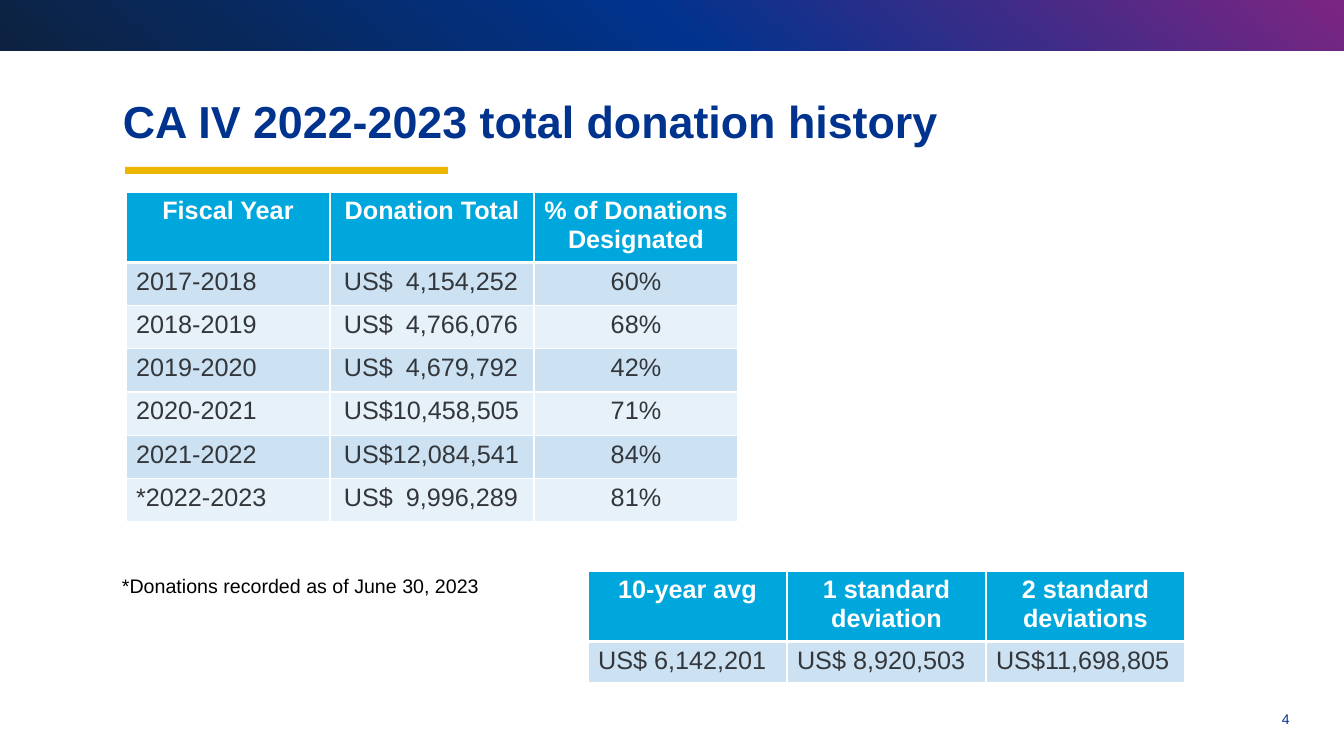
from lxml.etree import SubElement
from pptx import Presentation
from pptx.dml.color import RGBColor
from pptx.enum.shapes import MSO_SHAPE
from pptx.enum.text import MSO_ANCHOR, PP_ALIGN
from pptx.oxml.ns import qn
from pptx.util import Emu, Pt

SLIDE_WIDTH, SLIDE_HEIGHT = 1344, 756
EMU_PER_PX = 12192000 / SLIDE_WIDTH

NAVY = RGBColor(0x0D, 0x22, 0x40)
BLUE = RGBColor(0x00, 0x33, 0x8D)
PURPLE = RGBColor(0x7A, 0x25, 0x82)
GOLD = RGBColor(0xEB, 0xB7, 0x00)
SKY = RGBColor(0x00, 0xA7, 0xDC)
BANDS = RGBColor(0xCC, 0xE1, 0xF2), RGBColor(0xE7, 0xF1, 0xF9)
GRAPHITE = RGBColor(0x33, 0x37, 0x3B)
BLACK = RGBColor(0, 0, 0)
WHITE = RGBColor(0xFF, 0xFF, 0xFF)

HISTORY = [
    ["Fiscal Year", "Donation Total", "% of Donations Designated"],
    ["2017-2018", "US$\t4,154,252", "60%"],
    ["2018-2019", "US$\t4,766,076", "68%"],
    ["2019-2020", "US$\t4,679,792", "42%"],
    ["2020-2021", "US$10,458,505", "71%"],
    ["2021-2022", "US$12,084,541", "84%"],
    ["*2022-2023", "US$\t9,996,289", "81%"],
]
DEVIATIONS = [
    ["10-year avg", "1 standard deviation", "2 standard deviations"],
    ["US$ 6,142,201", "US$ 8,920,503", "US$11,698,805"],
]


def px(length):
    return Emu(round(length * EMU_PER_PX))


def write(paragraph, text, size, color, bold=False):
    run = paragraph.add_run()
    run.text = text
    for name, value in {"name": "Arial", "size": Pt(size), "bold": bold}.items():
        setattr(run.font, name, value)
    run.font.color.rgb = color


def add_text(slide, box, text, size, color, bold=False, anchor=MSO_ANCHOR.TOP):
    frame = slide.shapes.add_textbox(*map(px, box)).text_frame
    frame.word_wrap = True
    frame.vertical_anchor = anchor
    write(frame.paragraphs[0], text, size, color, bold)


def add_bar(slide, box):
    shape = slide.shapes.add_shape(MSO_SHAPE.RECTANGLE, *map(px, box))
    shape.shadow.inherit = False
    shape.line.fill.background()
    return shape


def add_banner(slide, box):
    fill = add_bar(slide, box).fill
    fill.gradient()
    fill.gradient_angle = 50
    stops = fill._fill._gradFill.find(qn("a:gsLst"))
    stops.clear()
    for percent, color in ((0, NAVY), (50, BLUE), (99, PURPLE)):
        stop = SubElement(stops, qn("a:gs"), pos=str(percent * 1000))
        SubElement(stop, qn("a:srgbClr"), val=str(color))


def add_heading(slide, box):
    """Title with the gold rule below it."""
    left, top, width, height = box
    add_text(slide, box, "CA IV 2022-2023 total donation history", 32, BLUE,
             bold=True, anchor=MSO_ANCHOR.MIDDLE)
    rule = add_bar(slide, (left + 12, top + height + 17, 323, 7))
    rule.fill.solid()
    rule.fill.fore_color.rgb = GOLD


def set_borders(cell, bottom):
    properties = cell._tc.get_or_add_tcPr()
    for side, width in (("L", 1), ("R", 1), ("T", 1), ("B", bottom)):
        line = SubElement(properties, qn(f"a:ln{side}"), w=str(Pt(width)))
        fill = SubElement(line, qn("a:solidFill"))
        SubElement(fill, qn("a:srgbClr"), val=str(WHITE))


def align_amount(cell, paragraph):
    """Start at the currency sign and end the figures at a right tab."""
    cell.margin_left = px(14)
    tabs = SubElement(paragraph._p.get_or_add_pPr(), qn("a:tabLst"))
    SubElement(tabs, qn("a:tab"), pos=str(px(174)), algn="r")


def add_data_table(slide, box, rows, header_height, centred=(), amounts=()):
    left, top, width, height = box
    columns = len(rows[0])
    table = slide.shapes.add_table(len(rows), columns, *map(px, box)).table
    table.horz_banding = False
    for column in table.columns:
        column.width = px(width / columns)
    row_height = (height - header_height) / (len(rows) - 1)
    for r, values in enumerate(rows):
        header = r == 0
        table.rows[r].height = px(header_height if header else row_height)
        for c, value in enumerate(values):
            cell = table.cell(r, c)
            set_borders(cell, 3 if header else 1)
            cell.fill.solid()
            cell.fill.fore_color.rgb = SKY if header else BANDS[(r - 1) % 2]
            paragraph = cell.text_frame.paragraphs[0]
            if header or c in centred:
                paragraph.alignment = PP_ALIGN.CENTER
            elif c in amounts:
                align_amount(cell, paragraph)
            write(paragraph, value, 18, WHITE if header else GRAPHITE, header)


def build_donation_slide(presentation):
    slide = presentation.slides.add_slide(presentation.slide_layouts[6])
    add_banner(slide, (0, 0, SLIDE_WIDTH, 51))
    add_heading(slide, (113, 92, 923, 58))
    add_data_table(slide, (126, 192, 612, 326), HISTORY, 67, centred=(2,), amounts=(1,))
    add_text(slide, (112, 569, 440, 34), "*Donations recorded as of June 30, 2023", 14, BLACK)
    add_data_table(slide, (588, 571, 597, 107), DEVIATIONS, 66)
    add_text(slide, (1272, 706, 72, 50), "4", 10, BLUE)


def main():
    presentation = Presentation()
    presentation.slide_width = px(SLIDE_WIDTH)
    presentation.slide_height = px(SLIDE_HEIGHT)
    build_donation_slide(presentation)
    presentation.save("out.pptx")


if __name__ == "__main__":
    main()
